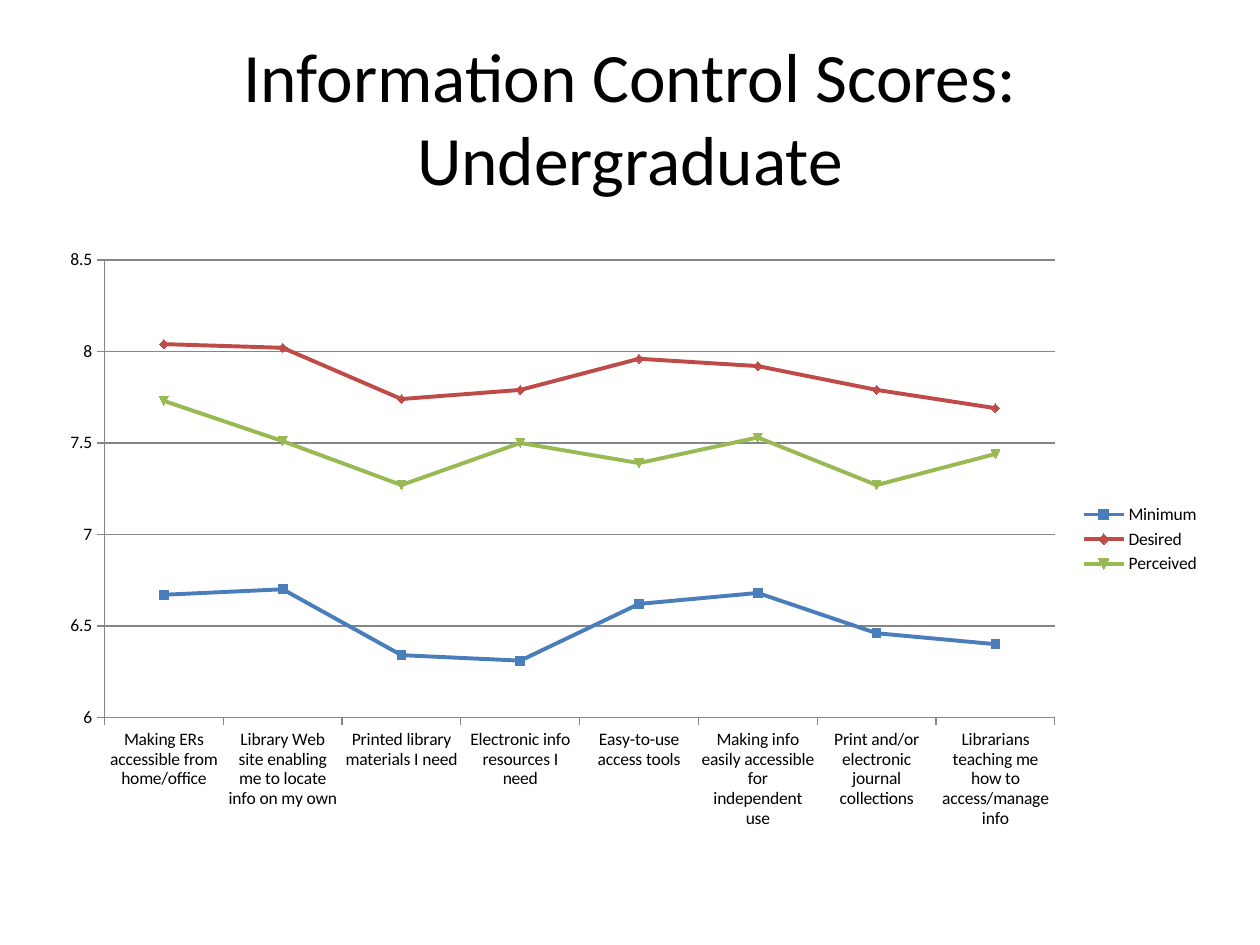
from dataclasses import dataclass

from pptx import Presentation
from pptx.chart.data import CategoryChartData
from pptx.dml.color import RGBColor
from pptx.enum.chart import XL_CHART_TYPE, XL_LEGEND_POSITION, XL_TICK_MARK
from pptx.enum.text import MSO_ANCHOR, PP_ALIGN
from pptx.util import Cm, Pt


@dataclass(frozen=True)
class Theme:
    font: str = "Calibri"
    title_size: float = 39.6
    chart_size: float = 10
    series_width: float = 2.25
    axis_width: float = 0.75
    ink: str = "000000"
    paper: str = "FFFFFF"
    axis: str = "868686"
    series: tuple = ("4A7EBB", "BE4B48", "98B954")


QUESTIONS = (
    "Making ERs accessible from home/office",
    "Library Web site enabling me to locate info on my own",
    "Printed library materials I need",
    "Electronic info resources I need",
    "Easy-to-use access tools",
    "Making info easily accessible for independent use",
    "Print and/or electronic journal collections",
    "Librarians teaching me how to access/manage info",
)
SCORES = {
    "Minimum": (6.67, 6.7, 6.34, 6.31, 6.62, 6.68, 6.46, 6.4),
    "Desired": (8.04, 8.02, 7.74, 7.79, 7.96, 7.92, 7.79, 7.69),
    "Perceived": (7.73, 7.51, 7.27, 7.5, 7.39, 7.53, 7.27, 7.44),
}


class SlideBuilder:
    """Adds styled elements to the current slide."""

    def __init__(self, slide, theme):
        self.slide = slide
        self.theme = theme
        slide.background.fill.solid()
        slide.background.fill.fore_color.rgb = RGBColor.from_string(theme.paper)

    def style_font(self, font, size):
        font.name = self.theme.font
        font.size = Pt(size)
        font.color.rgb = RGBColor.from_string(self.theme.ink)

    def style_line(self, line, color, width):
        line.color.rgb = RGBColor.from_string(color)
        line.width = Pt(width)

    def add_title(self, wording, left, top, width, height):
        frame = self.slide.shapes.add_textbox(left, top, width, height).text_frame
        frame.word_wrap = True
        frame.vertical_anchor = MSO_ANCHOR.MIDDLE
        frame.text = wording
        heading = frame.paragraphs[0]
        heading.alignment = PP_ALIGN.CENTER
        self.style_font(heading.runs[0].font, self.theme.title_size)

    def add_line_chart(self, categories, scores, left, top, width, height):
        theme = self.theme
        score_data = CategoryChartData()
        score_data.categories = categories
        for level, values in scores.items():
            score_data.add_series(level, values)
        chart = self.slide.shapes.add_chart(
            XL_CHART_TYPE.LINE_MARKERS, left, top, width, height, score_data
        ).chart
        self.style_font(chart.font, theme.chart_size)
        chart.has_title = False
        chart.has_legend = True
        chart.legend.position = XL_LEGEND_POSITION.RIGHT
        chart.legend.include_in_layout = False

        questions, scale = chart.category_axis, chart.value_axis
        scale.minimum_scale, scale.maximum_scale, scale.major_unit = 6, 8.5, 0.5
        scale.has_major_gridlines = True
        for axis in (questions, scale):
            axis.major_tick_mark = XL_TICK_MARK.OUTSIDE
            axis.minor_tick_mark = XL_TICK_MARK.NONE
        for part in (questions, scale, scale.major_gridlines):
            self.style_line(part.format.line, theme.axis, theme.axis_width)

        plot = chart.plots[0]
        plot.vary_by_categories = False
        for level, color in zip(plot.series, theme.series):
            level.smooth = False
            self.style_line(level.format.line, color, theme.series_width)


def main():
    deck = Presentation()
    deck.slide_width, deck.slide_height = Cm(25.4), Cm(19.05)
    builder = SlideBuilder(deck.slides.add_slide(deck.slide_layouts[6]), Theme())
    builder.add_title(
        "Information Control Scores: Undergraduate",
        Cm(1.27), Cm(0.76), Cm(22.86), Cm(3.18),
    )
    builder.add_line_chart(
        QUESTIONS, SCORES, Cm(0.95), Cm(4.8), Cm(23.5), Cm(12.14)
    )
    deck.save("out.pptx")


if __name__ == "__main__":
    main()
